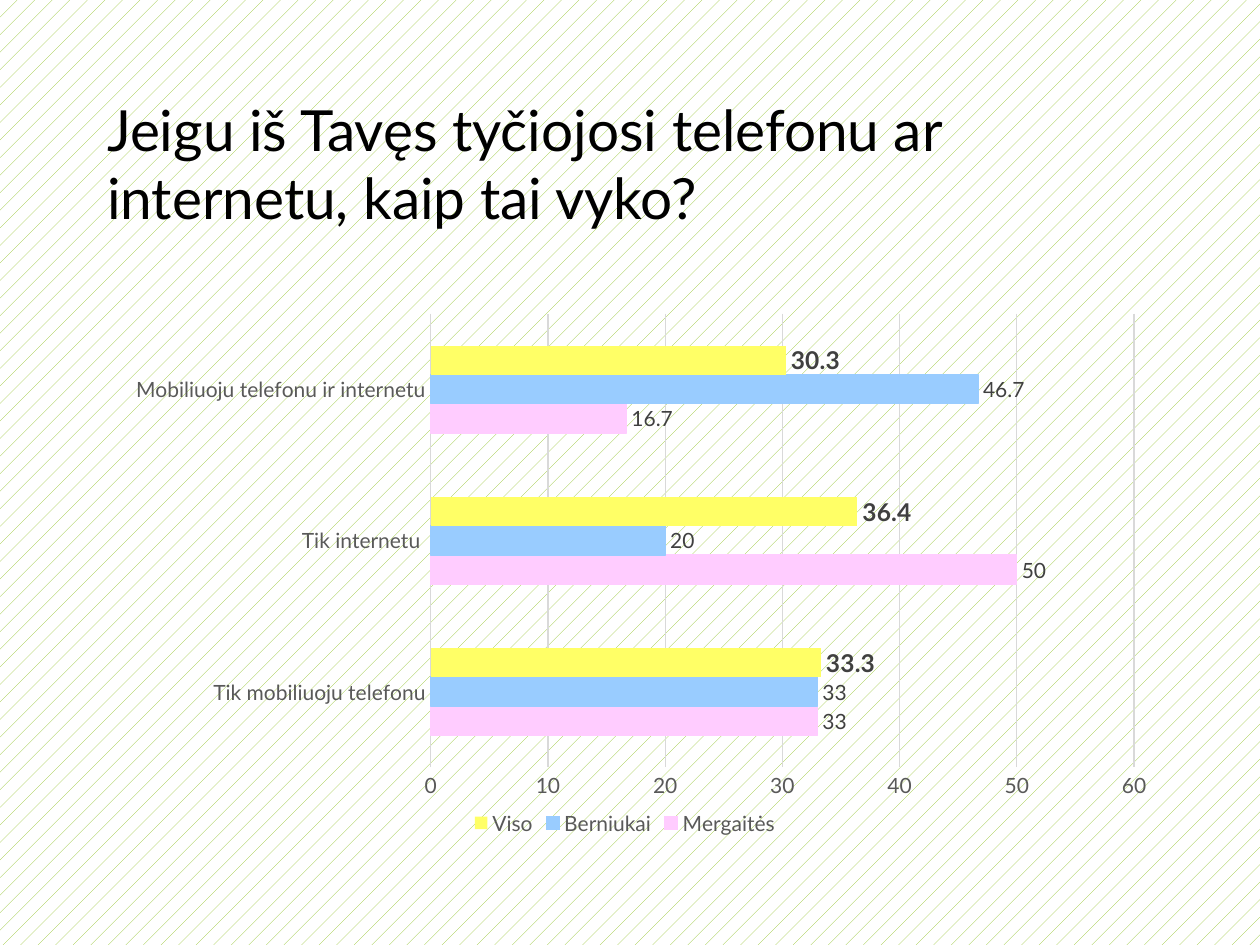
from pptx import Presentation, util as u
from pptx.chart.data import CategoryChartData
from pptx.dml.color import RGBColor
from pptx.enum import chart as ch, dml, text
from pptx.oxml import parse_xml
from pptx.oxml.ns import nsdecls, qn

FONT = "Lato"
CATEGORIES = ["Tik mobiliuoju telefonu", "Tik internetu ", "Mobiliuoju telefonu ir internetu"]
SERIES = [
    ("Mergaitės", (33, 50, 16.7), "FFCCFF", 12, False),
    ("Berniukai", (33, 20, 46.7), "99CCFF", 12, False),
    ("Viso", (33.3, 36.4, 30.3), "FFFF66", 14, True),
]


def rgb(value):
    """Return the colour for a hex string."""
    return RGBColor.from_string(value)


def set_font(font, size, color, bold=False):
    """Apply the deck font with a size, colour and weight."""
    font.name, font.size, font.bold = FONT, u.Pt(size), bold
    font.color.rgb = rgb(color)


def set_line(line, color):
    """Give a line a colour and the thin standard width."""
    line.color.rgb = rgb(color)
    line.width = u.Pt(0.75)


def set_background(s):
    """Fill the slide with a light green pattern."""
    fill = s.background.fill
    fill.patterned()
    fill.pattern = dml.MSO_PATTERN.PERCENT_5
    fill.fore_color.rgb = rgb("90C226")
    fill.back_color.rgb = rgb("FFFFFF")


def add_title(s, box):
    """Place the question in the title placeholder."""
    sp = s.shapes.title
    sp.left, sp.top, sp.width, sp.height = box
    tf = sp.text_frame
    tf.text = "Jeigu iš Tavęs tyčiojosi telefonu ar internetu, kaip tai vyko?"
    tf.word_wrap = True
    tf.auto_size = text.MSO_AUTO_SIZE.NONE
    tf.vertical_anchor = text.MSO_ANCHOR.MIDDLE
    p = tf.paragraphs[0]
    p.alignment = text.PP_ALIGN.LEFT
    set_font(p.runs[0].font, 32.4, "000000")


def set_plot_layout(chart, x, y, w, h):
    """Fix the inner plot area as fractions of the chart."""
    area = chart._chartSpace.chart.plotArea
    for old in area.findall(qn("c:layout")):
        area.remove(old)
    sizes = "".join(f'<c:{k} val="{v}"/>' for k, v in zip("xywh", (x, y, w, h)))
    area.insert(0, parse_xml(
        f'<c:layout {nsdecls("c")}><c:manualLayout><c:layoutTarget val="inner"/>'
        f'<c:xMode val="edge"/><c:yMode val="edge"/>{sizes}</c:manualLayout></c:layout>'))


def format_axes(chart):
    """Style both axes and the gridlines."""
    for axis in (chart.category_axis, chart.value_axis):
        axis.major_tick_mark = axis.minor_tick_mark = ch.XL_TICK_MARK.NONE
        set_font(axis.tick_labels.font, 12, "595959")
    set_line(chart.category_axis.format.line, "D9D9D9")
    values = chart.value_axis
    values.minimum_scale, values.maximum_scale, values.major_unit = 0, 60, 10
    values.format.line.fill.background()
    values.has_major_gridlines = True
    set_line(values.major_gridlines.format.line, "D9D9D9")


def format_series(series, color, size, bold):
    """Colour one series and show its values."""
    series.format.fill.solid()
    series.format.fill.fore_color.rgb = rgb(color)
    series.invert_if_negative = False
    if bold:
        series.format.line.fill.background()
    else:
        set_line(series.format.line, color)
    labels = series.data_labels
    labels.show_value = True
    labels.position = ch.XL_LABEL_POSITION.OUTSIDE_END
    set_font(labels.font, size, "404040", bold)


def add_answers_chart(s, box):
    """Add the clustered bar chart of answers."""
    data = CategoryChartData()
    data.categories = CATEGORIES
    for name, values, *_ in SERIES:
        data.add_series(name, values)
    chart = s.shapes.add_chart(ch.XL_CHART_TYPE.BAR_CLUSTERED, *box, data).chart
    set_font(chart.font, 10, "000000")
    chart.has_title = False
    set_plot_layout(chart, 0.317, 0.071, 0.663, 0.8)
    format_axes(chart)
    plot = chart.plots[0]
    plot.gap_width, plot.overlap, plot.vary_by_categories = 219, 0, False
    for series, (_, _, color, size, bold) in zip(plot.series, SERIES):
        format_series(series, color, size, bold)
    chart.has_legend = True
    chart.legend.position = ch.XL_LEGEND_POSITION.BOTTOM
    chart.legend.include_in_layout = False
    set_font(chart.legend.font, 12, "595959")


def main():
    """Build and save the slide."""
    prs = Presentation()
    prs.slide_width, prs.slide_height = u.Inches(10), u.Inches(7.5)
    s = prs.slides.add_slide(prs.slide_layouts[5])
    set_background(s)
    add_title(s, [u.Inches(v) for v in (0.75, 0.67, 8.5, 1.25)])
    add_answers_chart(s, [u.Inches(v) for v in (0.75, 2.17, 8.42, 4.5)])
    prs.save("out.pptx")


if __name__ == "__main__":
    main()
